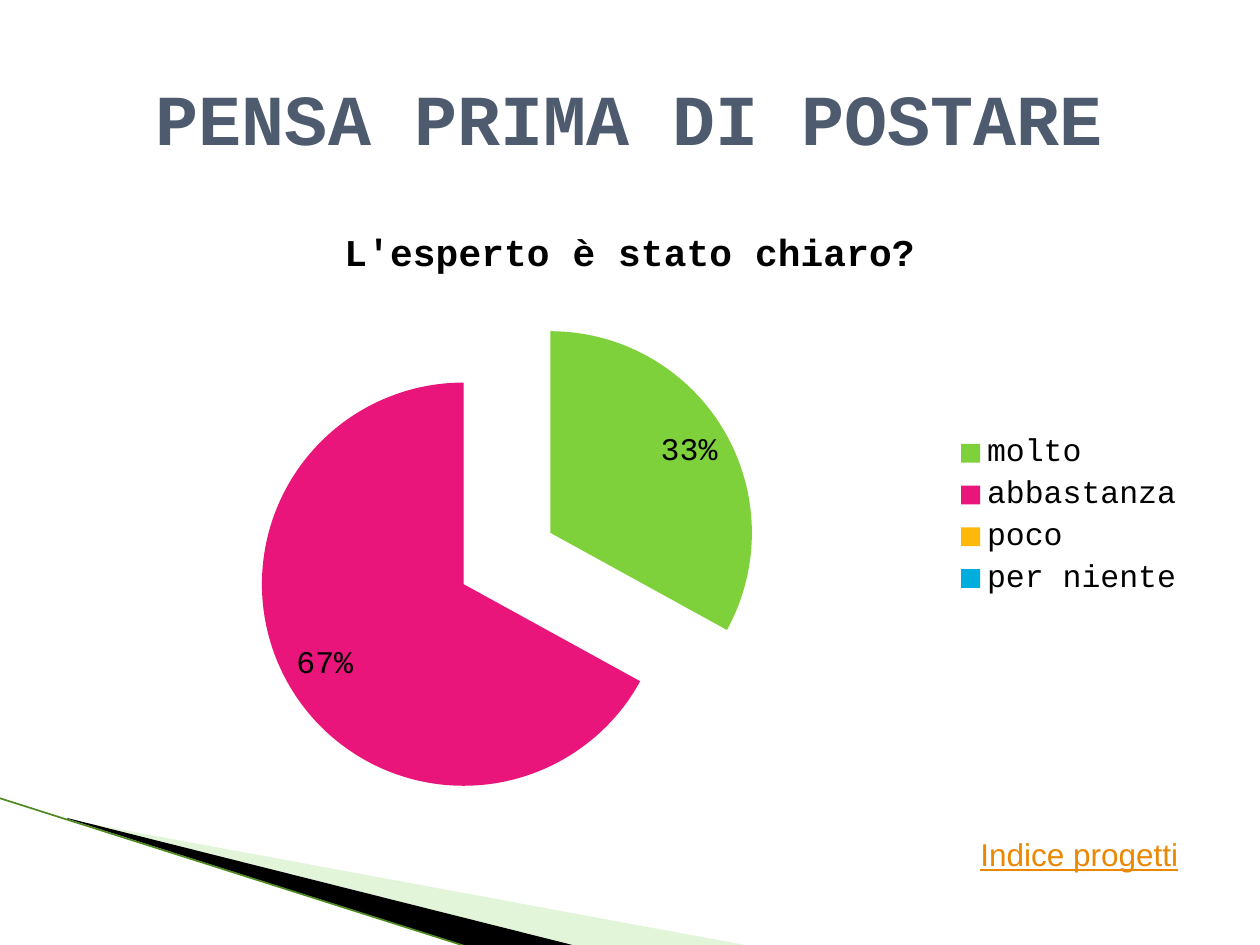
import pptx
import pptx.chart.data
import pptx.enum.chart
import pptx.enum.text
import pptx.util
from pptx.dml.color import RGBColor
from pptx.oxml import parse_xml
from pptx.oxml.ns import nsdecls, qn

# Content
TITLE = "PENSA PRIMA DI POSTARE"
ASK = "L'esperto è stato chiaro?"
VOTES = [("molto", 33, "lime"), ("abbastanza", 67, "pink"),
         ("poco", 0, "gold"), ("per niente", 0, "blue")]
INDEX = "Indice progetti"
COLORS = {"lime": "7FD13B", "pink": "EA157A", "gold": "FEB80A", "blue": "00ADDC",
          "slate": "4E5B6F", "link": "EB8803", "pale": "B8E7A1",
          "black": "000000", "edge": "4E8A20"}
MONO, SANS = "Courier New", "Arial"
WEDGES = [("pale", 40, [(69, 820), (750, 946), (575, 946), (69, 819)]),
          ("black", 100, [(67, 818), (576, 946), (469, 947), (68, 819)])]
EDGE = (-1, 798, 468, 947)
SCALE = 914400 / 126


def px(n):
    return pptx.util.Emu(round(n * SCALE))


def rgb(name):
    return RGBColor.from_string(COLORS[name])


def style(font, face, size, color, bold=False):
    font.name, font.size, font.bold = face, pptx.util.Pt(size), bold
    font.color.rgb = rgb(color)


def add_text(slide, text, box, face, size, color, bold=False):
    shape = slide.shapes.add_textbox(*map(px, box))
    frame = shape.text_frame
    frame.word_wrap = True
    frame.text = text
    style(frame.paragraphs[0].runs[0].font, face, size, color, bold)
    return frame


def add_decor(slide):
    for color, alpha, points in WEDGES:
        pen = slide.shapes.build_freeform(*points[0], scale=SCALE)
        pen.add_line_segments(points[1:], close=True)
        wedge = pen.convert_to_shape()
        wedge.shadow.inherit = False
        wedge.line.fill.background()
        wedge.fill.solid()
        wedge.fill.fore_color.rgb = rgb(color)
        if alpha < 100:
            tint = wedge.fill._xPr.find(qn("a:solidFill"))[0]
            tint.append(parse_xml(f'<a:alpha {nsdecls("a")} val="{alpha * 1000}"/>'))
    edge = slide.shapes.add_connector(1, *map(px, EDGE))
    edge.line.color.rgb = rgb("edge")
    edge.line.width = pptx.util.Pt(0.95)
    edge._element.spPr.append(parse_xml(f'<a:effectLst {nsdecls("a")}/>'))


def add_pie(slide):
    enum = pptx.enum.chart
    data = pptx.chart.data.CategoryChartData()
    data.categories = [name for name, _, _ in VOTES]
    data.add_series(ASK, [count for _, count, _ in VOTES])
    box = map(px, (63, 204, 1134, 624))
    chart = slide.shapes.add_chart(enum.XL_CHART_TYPE.PIE, *box, data).chart
    style(chart.font, MONO, 18, "black")

    chart.has_title = True
    head = chart.chart_title.text_frame
    head.text = ASK
    style(head.paragraphs[0].runs[0].font, MONO, 21.6, "black", True)
    chart.has_legend = True
    chart.legend.position = enum.XL_LEGEND_POSITION.RIGHT
    chart.legend.include_in_layout = False
    style(chart.legend.font, MONO, 18, "black")

    # Slices
    plot = chart.plots[0]
    plot.vary_by_categories = True
    series = plot.series[0]
    for i, (_, _, color) in enumerate(VOTES):
        fill = series.points[i].format.fill
        fill.solid()
        fill.fore_color.rgb = rgb(color)
    burst = parse_xml(f'<c:explosion {nsdecls("c")} val="25"/>')
    series._element.find(qn("c:dPt")).addprevious(burst)

    # Percentages, only for slices that have votes
    labels = series.data_labels
    labels.show_percentage = True
    labels.show_value = False
    labels.number_format = "0%"
    labels.number_format_is_linked = False
    labels.position = enum.XL_LABEL_POSITION.INSIDE_END
    style(labels.font, MONO, 18, "black")
    empty = [i for i, (_, count, _) in enumerate(VOTES) if not count]
    for spot, i in enumerate(empty):
        labels._element.insert(spot, parse_xml(
            f'<c:dLbl {nsdecls("c")}><c:idx val="{i}"/><c:delete val="1"/></c:dLbl>'))


def main():
    deck = pptx.Presentation()
    deck.slide_width, deck.slide_height = px(1260), px(945)
    slide = deck.slides.add_slide(deck.slide_layouts[6])
    add_decor(slide)
    add_pie(slide)
    title = add_text(slide, TITLE, (63, 38, 1134, 158), MONO, 41, "slate", True)
    title.vertical_anchor = pptx.enum.text.MSO_ANCHOR.MIDDLE
    title.paragraphs[0].alignment = pptx.enum.text.PP_ALIGN.CENTER
    index = add_text(slide, INDEX, (968, 829, 238, 50), SANS, 18, "link")
    index.paragraphs[0].runs[0].font.underline = True
    deck.save("out.pptx")


if __name__ == "__main__":
    main()
